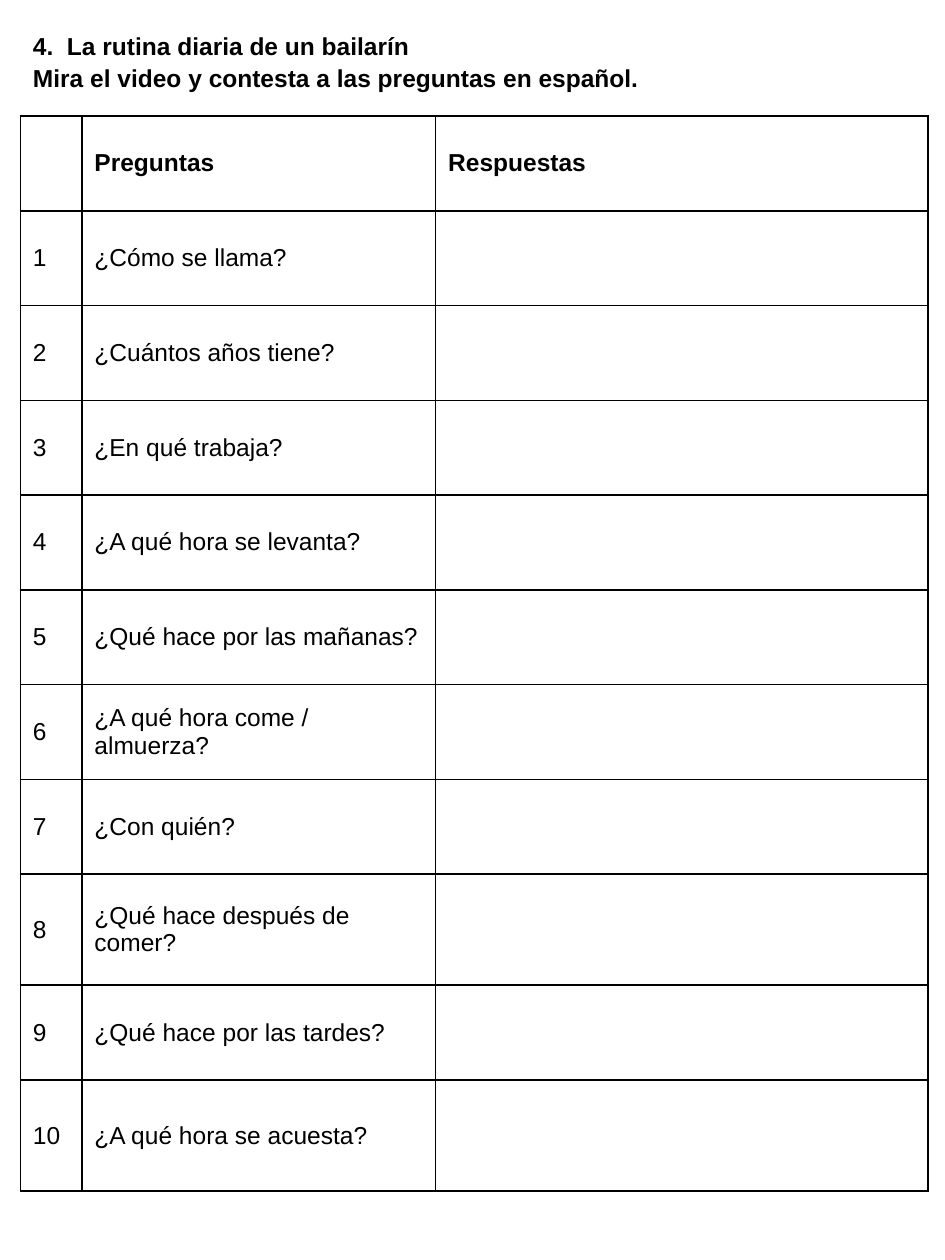
from lxml import etree
from pptx import Presentation
from pptx.dml.color import RGBColor
from pptx.enum.text import MSO_ANCHOR, MSO_AUTO_SIZE, PP_ALIGN
from pptx.oxml.ns import qn
from pptx.util import Cm, Pt

MIDDLE, TOP = MSO_ANCHOR.MIDDLE, MSO_ANCHOR.TOP
LEFT = PP_ALIGN.LEFT
NO_AUTOFIT = MSO_AUTO_SIZE.NONE
COLORS = {"ink": "000000", "paper": "FFFFFF"}
FONT = "Arial"
BORDER_WIDTH = Pt(1)
TITLE_LAYOUT = 5


def write_text(frame, text, size=14, bold=False, color="ink", spacing=1.0):
    para = frame.paragraphs[0]
    para.text = text
    para.alignment = LEFT
    para.line_spacing = spacing
    for span in para.runs:
        span.font.name = FONT
        span.font.size = Pt(size)
        span.font.bold = bold
        span.font.color.rgb = RGBColor.from_string(COLORS[color])


def add_borders(cell, color="ink"):
    properties = cell._tc.get_or_add_tcPr()
    for position, side in enumerate(("a:lnL", "a:lnR", "a:lnT", "a:lnB")):
        line = etree.Element(qn(side), w=str(BORDER_WIDTH))
        fill = etree.SubElement(line, qn("a:solidFill"))
        etree.SubElement(fill, qn("a:srgbClr"), val=COLORS[color])
        properties.insert(position, line)


# Page
deck = Presentation()
deck.slide_width, deck.slide_height = Cm(19.05), Cm(25.4)
page = deck.slides.add_slide(deck.slide_layouts[TITLE_LAYOUT])

# Title and instruction
title = page.shapes.title
title.left, title.top = Cm(0.41), Cm(0.46)
title.width, title.height = Cm(16.94), Cm(1.45)
frame = title.text_frame
frame.word_wrap = True
frame.auto_size = NO_AUTOFIT
frame.vertical_anchor = TOP
write_text(
    frame,
    "4.  La rutina diaria de un bailarín\v"
    "Mira el video y contesta a las preguntas en español.",
    bold=True,
    spacing=1.07,
)

# Questions, numbered by their order
questions = [
    "¿Cómo se llama?",
    "¿Cuántos años tiene?",
    "¿En qué trabaja?",
    "¿A qué hora se levanta?",
    "¿Qué hace por las mañanas?",
    "¿A qué hora come / almuerza?",
    "¿Con quién?",
    "¿Qué hace después de comer?",
    "¿Qué hace por las tardes?",
    "¿A qué hora se acuesta?",
]
rows = [("", "Preguntas", "Respuestas")]
rows += [(str(number), question, "") for number, question in enumerate(questions, 1)]

# Worksheet table
column_widths = [1.24, 7.13, 9.93]
row_height, tall_row_height = 1.91, 2.24
tall_rows = {8, 10}
row_heights = [tall_row_height if index in tall_rows else row_height
               for index in range(len(rows))]
table = page.shapes.add_table(
    len(rows), len(column_widths), Cm(0.41), Cm(2.34),
    Cm(sum(column_widths)), Cm(sum(row_heights)),
).table
table.horz_banding = False
for column, width in zip(table.columns, column_widths):
    column.width = Cm(width)
for row_index, texts in enumerate(rows):
    table.rows[row_index].height = Cm(row_heights[row_index])
    for column_index, text in enumerate(texts):
        cell = table.cell(row_index, column_index)
        cell.vertical_anchor = MIDDLE
        cell.fill.solid()
        cell.fill.fore_color.rgb = RGBColor.from_string(COLORS["paper"])
        add_borders(cell)
        if text:
            write_text(cell.text_frame, text, bold=row_index == 0)

deck.save("out.pptx")
